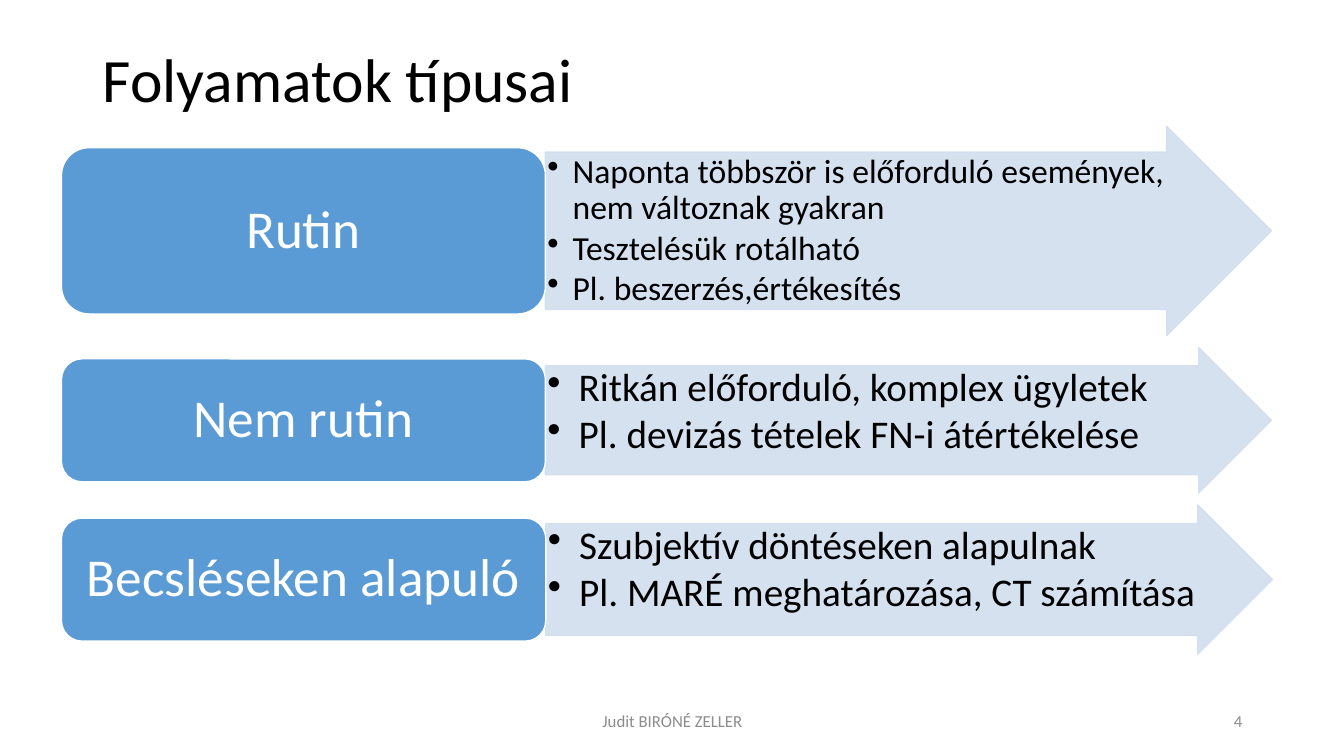
import pptx
import pptx.util
import pptx.dml.color
import pptx.enum.shapes
import pptx.enum.text
import pptx.oxml
import pptx.oxml.ns

SLIDE_WIDTH, SLIDE_HEIGHT = 13.33, 7.5
LABEL_SHARE = 0.4
FONT = "Calibri"
BLACK, WHITE, GRAY = "000000", "FFFFFF", "8C8C8C"
BLUE, PALE_BLUE = "5B9BD5", "D2DEEF"
ALIGN = pptx.enum.text.PP_ALIGN
ANCHOR = pptx.enum.text.MSO_ANCHOR
SHAPE = pptx.enum.shapes.MSO_SHAPE

PROCESS_TYPES = [
    ("Rutin", (0.61, 1.25, 12, 2.08), 1.65, 24, 0.25, [
        "Naponta többször is előforduló események, nem változnak gyakran",
        "Tesztelésük rotálható",
        "Pl. beszerzés,értékesítés",
    ]),
    ("Nem rutin", (0.61, 3.45, 12, 1.44), 1.22, 28, 0.31, [
        "Ritkán előforduló, komplex ügyletek",
        "Pl. devizás tételek FN-i átértékelése",
    ]),
    ("Becsléseken alapuló", (0.61, 5.01, 12.01, 1.48), 1.22, 28, 0.31, [
        "Szubjektív döntéseken alapulnak",
        "Pl. MARÉ meghatározása, CT számítása",
    ]),
]


def color(value):
    return pptx.dml.color.RGBColor.from_string(value)


def inches(*lengths):
    return [pptx.util.Inches(length) for length in lengths]


def prepare_frame(shape, anchor, horizontal=0.1, vertical=0.05):
    frame = shape.text_frame
    frame.word_wrap = True
    frame.auto_size = pptx.enum.text.MSO_AUTO_SIZE.NONE
    frame.vertical_anchor = anchor
    frame.margin_left = frame.margin_right = pptx.util.Inches(horizontal)
    frame.margin_top = frame.margin_bottom = pptx.util.Inches(vertical)
    return frame


def write(paragraph, text, size, text_color, alignment, line_spacing=0.9):
    paragraph.alignment = alignment
    paragraph.line_spacing = line_spacing
    run = paragraph.add_run()
    run.text = text
    run.font.name = FONT
    run.font.size = pptx.util.Pt(size)
    run.font.color.rgb = color(text_color)


def add_bullet(paragraph, indent):
    properties = paragraph._p.get_or_add_pPr()
    properties.set("marL", str(pptx.util.Inches(indent)))
    properties.set("indent", str(-pptx.util.Inches(indent)))
    bullet = pptx.oxml.ns.qn("a:buChar")
    properties.append(properties.makeelement(bullet, {"char": "•"}))


def set_opacity(shape, percent):
    tag = pptx.oxml.ns.qn("a:alpha")
    for fill_color in shape._element.spPr.iter(pptx.oxml.ns.qn("a:srgbClr")):
        fill_color.append(fill_color.makeelement(tag, {"val": str(percent * 1000)}))


def add_block(slide, kind, box, fill_color, line_color):
    shape = slide.shapes.add_shape(kind, *inches(*box))
    shape.shadow.inherit = False
    shape.fill.solid()
    shape.fill.fore_color.rgb = color(fill_color)
    shape.line.color.rgb = color(line_color)
    shape.line.width = pptx.util.Pt(1)
    return shape


def add_arrow(slide, box, size, indent, bullets):
    arrow = add_block(slide, SHAPE.RIGHT_ARROW, box, PALE_BLUE, PALE_BLUE)
    arrow.adjustments[0] = 0.75
    arrow.adjustments[1] = 0.5
    set_opacity(arrow, 90)
    frame = prepare_frame(arrow, ANCHOR.TOP, 0.02, 0.02)
    for index, text in enumerate(bullets):
        paragraph = frame.add_paragraph() if index else frame.paragraphs[0]
        write(paragraph, text, size, BLACK, ALIGN.LEFT)
        paragraph.space_after = pptx.util.Pt(size / 8)
        add_bullet(paragraph, indent)


def add_label(slide, box, text):
    label = add_block(slide, SHAPE.ROUNDED_RECTANGLE, box, BLUE, WHITE)
    frame = prepare_frame(label, ANCHOR.MIDDLE, 0.16, 0.08)
    write(frame.paragraphs[0], text, 38, WHITE, ALIGN.CENTER)


def add_process_row(slide, box, label, label_height, size, indent, bullets):
    left, top, width, height = box
    label_width = width * LABEL_SHARE
    arrow_box = (left + label_width, top, width - label_width, height)
    label_box = (left, top + (height - label_height) / 2, label_width, label_height)
    add_arrow(slide, arrow_box, size, indent, bullets)
    add_label(slide, label_box, label)


def add_title(slide, box, text):
    title = slide.shapes.title
    title.left, title.top, title.width, title.height = inches(*box)
    frame = prepare_frame(title, ANCHOR.MIDDLE)
    write(frame.paragraphs[0], text, 44, BLACK, ALIGN.LEFT)


def add_footer_text(slide, box, text, alignment):
    footer = slide.shapes.add_textbox(*inches(*box))
    frame = prepare_frame(footer, ANCHOR.MIDDLE)
    write(frame.paragraphs[0], text, 12, GRAY, alignment, 1.0)


def build_process_slide(presentation):
    slide = presentation.slides.add_slide(presentation.slide_layouts[5])
    add_title(slide, (0.92, 0.4, 11.71, 0.84), "Folyamatok típusai")
    for label, box, label_height, size, indent, bullets in PROCESS_TYPES:
        add_process_row(slide, box, label, label_height, size, indent, bullets)
    add_footer_text(slide, (4.42, 6.95, 4.5, 0.4), "Judit BIRÓNÉ ZELLER", ALIGN.CENTER)
    add_footer_text(slide, (9.42, 6.95, 3, 0.4), "4", ALIGN.RIGHT)


def main():
    presentation = pptx.Presentation()
    presentation.slide_width = pptx.util.Inches(SLIDE_WIDTH)
    presentation.slide_height = pptx.util.Inches(SLIDE_HEIGHT)
    build_process_slide(presentation)
    presentation.save("out.pptx")


if __name__ == "__main__":
    main()
